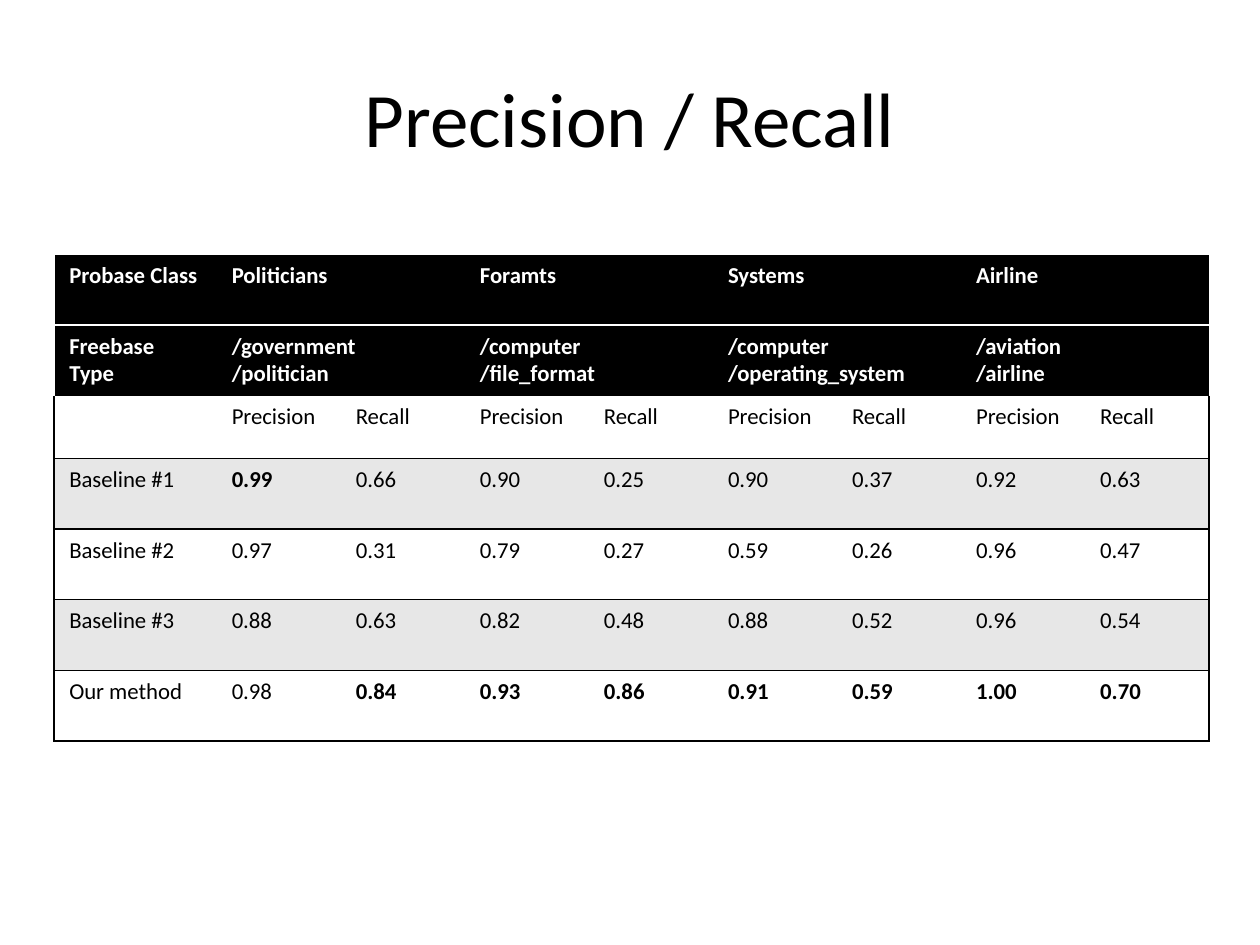
from pptx import Presentation
from pptx.dml.color import RGBColor
from pptx.enum.text import MSO_ANCHOR, PP_ALIGN
from pptx.oxml import parse_xml
from pptx.oxml.ns import nsdecls
from pptx.util import Inches, Pt

FONT, BLACK, WHITE, GREY = "Calibri", "000000", "FFFFFF", "E7E7E7"
TITLE = "Precision / Recall"
CLASSES = ["Probase Class", "Politicians", "Foramts", "Systems", "Airline"]
TYPES = ["Freebase Type", "/government\v/politician", "/computer\v/file_format",
         "/computer\v/operating_system", "/aviation\v/airline"]
RESULTS = [
    ("Baseline #1", [0.99, 0.66, 0.90, 0.25, 0.90, 0.37, 0.92, 0.63]),
    ("Baseline #2", [0.97, 0.31, 0.79, 0.27, 0.59, 0.26, 0.96, 0.47]),
    ("Baseline #3", [0.88, 0.63, 0.82, 0.48, 0.88, 0.52, 0.96, 0.54]),
    ("Our method", [0.98, 0.84, 0.93, 0.86, 0.91, 0.59, 1.00, 0.70]),
]
BEST = [max(column) for column in zip(*(scores for _, scores in RESULTS))]

LEFT, TOP, WIDTH = 0.43, 2.02, 9.17
LABEL_W, ROW_H, MEASURE_H = 1.29, 0.56, 0.5
HEADER_ROWS = 2


def rgb(value):
    return RGBColor.from_string(value)


def set_font(p, size, color, bold=False):
    p.font.name, p.font.size, p.font.bold = FONT, Pt(size), bold
    p.font.color.rgb = rgb(color)


def set_borders(cell, colors):
    """Draw the four edges (left, right, top, bottom); None means no line."""
    tc_pr = cell._tc.get_or_add_tcPr()
    for i, (edge, color) in enumerate(zip("LRTB", colors)):
        paint = (f'<a:solidFill><a:srgbClr val="{color}"/></a:solidFill>'
                 if color else "<a:noFill/>")
        tc_pr.insert(i, parse_xml(
            f'<a:ln{edge} {nsdecls("a")} w="{Pt(1)}">{paint}</a:ln{edge}>'))


def line_above(row):
    """Colour of the rule above a row; none where header meets body."""
    if row == HEADER_ROWS:
        return None
    return WHITE if row < HEADER_ROWS else BLACK


def spread(labels):
    """Give each label after the first a pair of columns."""
    return labels[:1] + [text for label in labels[1:] for text in (label, "")]


prs = Presentation()
prs.slide_width, prs.slide_height = Inches(10), Inches(7.5)
s = prs.slides.add_slide(prs.slide_layouts[5])

title = s.shapes.title
title.left, title.top, title.width, title.height = map(Inches, (0.5, 0.3, 9, 1.25))
title.text_frame.text = TITLE
title.text_frame.vertical_anchor = MSO_ANCHOR.MIDDLE
p = title.text_frame.paragraphs[0]
p.alignment = PP_ALIGN.CENTER
set_font(p, 44, BLACK)

rows = [spread(CLASSES), spread(TYPES), [""] + ["Precision", "Recall"] * 4]
rows += [[name] + [f"{v:.2f}" for v in scores] for name, scores in RESULTS]
n_rows, n_cols = len(rows), len(rows[0])
heights = [MEASURE_H if r == HEADER_ROWS else ROW_H for r in range(n_rows)]
table = s.shapes.add_table(n_rows, n_cols, Inches(LEFT), Inches(TOP),
                           Inches(WIDTH), Inches(sum(heights))).table
for c, column in enumerate(table.columns):
    column.width = Inches((WIDTH - LABEL_W) / (n_cols - 1) if c else LABEL_W)

for r, texts in enumerate(rows):
    table.rows[r].height = Inches(heights[r])
    header = r < HEADER_ROWS
    fill = BLACK if header else GREY if r % 2 else WHITE
    side = WHITE if header else BLACK
    for c, text in enumerate(texts):
        cell = table.cell(r, c)
        cell.margin_left = cell.margin_right = Inches(0.12)
        cell.margin_top = cell.margin_bottom = Inches(0.06)
        cell.fill.solid()
        cell.fill.fore_color.rgb = rgb(fill)
        set_borders(cell, (None if c else side, side if c == n_cols - 1 else None,
                           line_above(r), line_above(r + 1))
                    if c else (side, None, line_above(r), line_above(r + 1)))
        cell.text_frame.text = text
        best = r > HEADER_ROWS and c > 0 and RESULTS[r - 3][1][c - 1] == BEST[c - 1]
        set_font(cell.text_frame.paragraphs[0], 13, WHITE if header else BLACK,
                 header or best)
    if header:
        for c in range(1, n_cols, 2):
            table.cell(r, c).merge(table.cell(r, c + 1))

prs.save("out.pptx")
